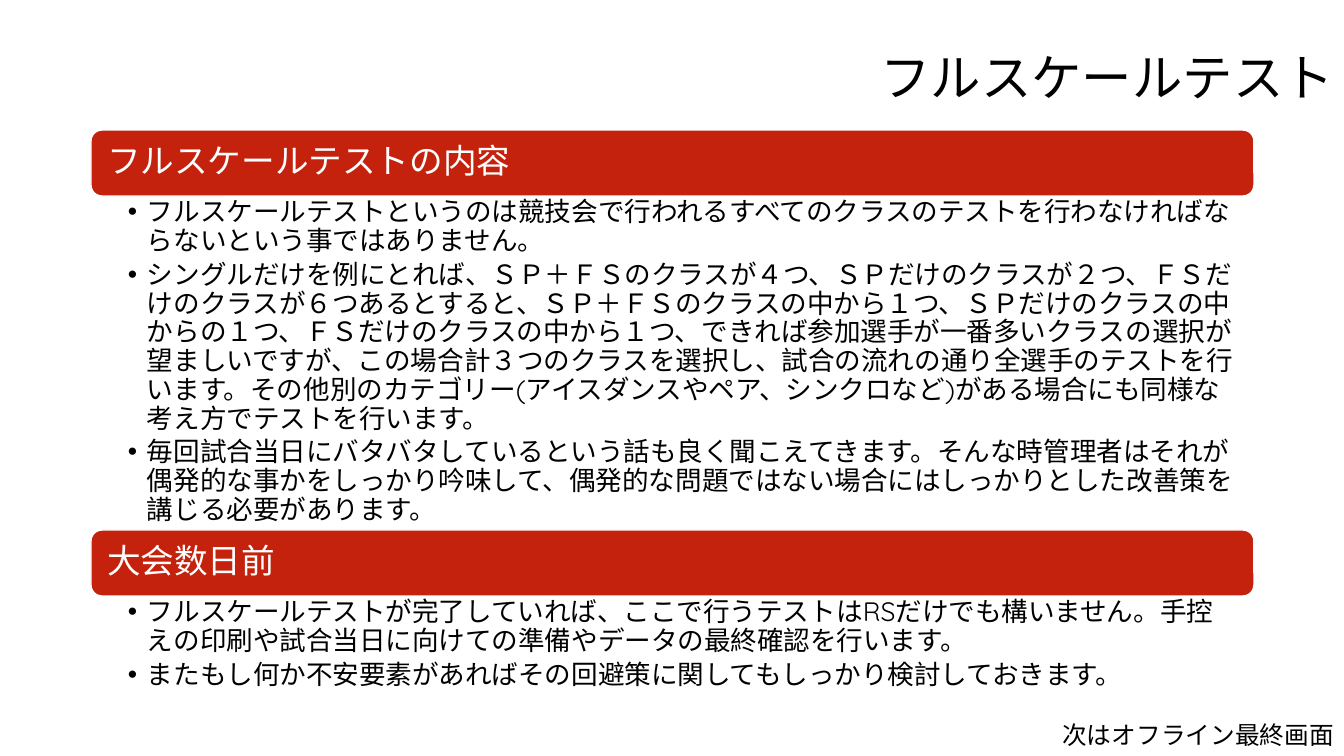
from dataclasses import dataclass

from lxml.etree import SubElement
from pptx import Presentation
from pptx.dml.color import RGBColor
from pptx.enum.shapes import MSO_SHAPE
from pptx.enum.text import MSO_ANCHOR, MSO_AUTO_SIZE, PP_ALIGN
from pptx.oxml.ns import qn
from pptx.util import Emu, Pt


@dataclass(frozen=True)
class Theme:
    font: str = "Quicksand"
    red: RGBColor = RGBColor(0xC4, 0x22, 0x0D)
    white: RGBColor = RGBColor(0xFF, 0xFF, 0xFF)
    black: RGBColor = RGBColor(0, 0, 0)
    title: float = 36
    heading: float = 24
    body: float = 19
    note: float = 17.6
    line_spacing: float = 0.9
    body_gap: float = 3.5


THEME = Theme()
EMU_PER_PX = 914400 / 100.8
LEFT, WIDTH, BAR_HEIGHT = 91, 1163, 66

# Heading, top of its bar, height of its list, list items
SECTIONS = [
    ("フルスケールテストの内容", 130, 334, [
        "フルスケールテストというのは競技会で行われるすべてのクラスのテストを行わなければならないという事ではありません。",
        "シングルだけを例にとれば、ＳＰ＋ＦＳのクラスが４つ、ＳＰだけのクラスが２つ、ＦＳだけのクラスが６つあるとすると、"
        "ＳＰ＋ＦＳのクラスの中から１つ、ＳＰだけのクラスの中からの１つ、ＦＳだけのクラスの中から１つ、"
        "できれば参加選手が一番多いクラスの選択が望ましいですが、この場合計３つのクラスを選択し、"
        "試合の流れの通り全選手のテストを行います。その他別のカテゴリー(アイスダンスやペア、シンクロなど)が"
        "ある場合にも同様な考え方でテストを行います。",
        "毎回試合当日にバタバタしているという話も良く聞こえてきます。そんな時管理者はそれが偶発的な事かを"
        "しっかり吟味して、偶発的な問題ではない場合にはしっかりとした改善策を講じる必要があります。",
    ]),
    ("大会数日前", 530, 110, [
        "フルスケールテストが完了していれば、ここで行うテストはRSだけでも構いません。"
        "手控えの印刷や試合当日に向けての準備やデータの最終確認を行います。",
        "またもし何か不安要素があればその回避策に関してもしっかり検討しておきます。",
    ]),
]


def px(n):
    return Emu(round(n * EMU_PER_PX))


def place(sp, left, top, width, height):
    sp.left, sp.top, sp.width, sp.height = map(px, (left, top, width, height))


def set_frame(tf, anchor, insets=(10, 5, 10, 5)):
    tf.word_wrap = True
    tf.auto_size = MSO_AUTO_SIZE.NONE
    tf.vertical_anchor = anchor
    tf.margin_left, tf.margin_top, tf.margin_right, tf.margin_bottom = map(px, insets)


def format_paragraph(p, size, color, align=PP_ALIGN.LEFT, gap=0):
    p.alignment = align
    p.line_spacing = THEME.line_spacing
    p.space_before = Pt(0)
    p.space_after = Pt(gap)
    for r in p.runs:
        r.font.name = THEME.font
        r.font.size = Pt(size)
        r.font.color.rgb = color


def add_bullet(p, indent):
    pPr = p._p.get_or_add_pPr()
    pPr.set("marL", str(px(indent)))
    pPr.set("indent", str(-px(indent)))
    SubElement(pPr, qn("a:buFont")).set("typeface", "Arial")
    SubElement(pPr, qn("a:buChar")).set("char", "•")


def fill_right_line(sp, text, size):
    tf = sp.text_frame
    tf.text = text
    set_frame(tf, MSO_ANCHOR.MIDDLE)
    format_paragraph(tf.paragraphs[0], size, THEME.black, PP_ALIGN.RIGHT)


def add_heading_bar(slide, text, top):
    sp = slide.shapes.add_shape(
        MSO_SHAPE.ROUNDED_RECTANGLE, px(LEFT), px(top), px(WIDTH), px(BAR_HEIGHT))
    sp.shadow.inherit = False
    sp.fill.solid()
    sp.fill.fore_color.rgb = THEME.red
    sp.line.color.rgb = THEME.white
    sp.line.width = Pt(1)
    sp.text_frame.text = text
    set_frame(sp.text_frame, MSO_ANCHOR.MIDDLE, (13, 10, 13, 10))
    format_paragraph(sp.text_frame.paragraphs[0], THEME.heading, THEME.white)


def fill_list(sp, items, top, height):
    place(sp, LEFT, top, WIDTH, height)
    tf = sp.text_frame
    tf.text = "\n".join(items)
    set_frame(tf, MSO_ANCHOR.TOP, (37, 3, 19, 3))
    for p in tf.paragraphs:
        p.level = 1
        add_bullet(p, 19)
        format_paragraph(p, THEME.body, THEME.black, gap=THEME.body_gap)


def main():
    prs = Presentation()
    prs.slide_width, prs.slide_height = px(1344), px(756)
    slide = prs.slides.add_slide(prs.slide_layouts.get_by_name("Two Content"))

    # Title
    title = slide.shapes.title
    place(title, 178, 50, 1166, 60)
    fill_right_line(title, "フルスケールテスト", THEME.title)

    # Headings with their lists
    bodies = [slide.placeholders[1], slide.placeholders[2]]
    for body, (heading, top, height, items) in zip(bodies, SECTIONS):
        add_heading_bar(slide, heading, top)
        fill_list(body, items, top + BAR_HEIGHT, height)

    # Pointer to the next slide
    note = slide.shapes.add_textbox(px(772), px(718), px(572), px(38))
    fill_right_line(note, "次はオフライン最終画面", THEME.note)

    prs.save("out.pptx")


if __name__ == "__main__":
    main()
